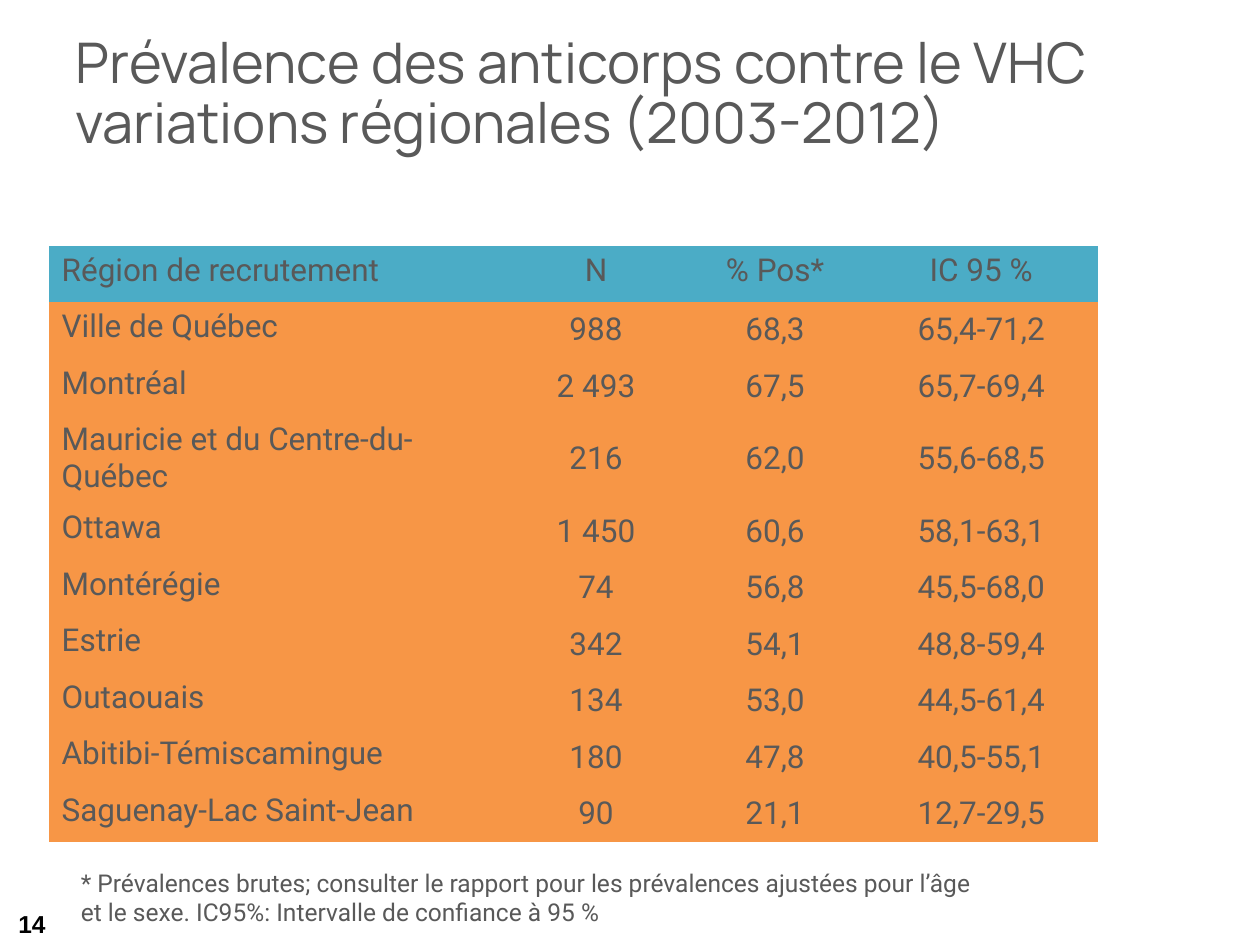
import dataclasses

import pptx
import pptx.dml.color
import pptx.enum.text
import pptx.oxml.ns
import pptx.presentation
import pptx.slide
import pptx.text.text
import pptx.util

Cm = pptx.util.Cm
Align = pptx.enum.text.PP_ALIGN
Anchor = pptx.enum.text.MSO_ANCHOR

GREY = "595959"
HEADER_FILL = "4BACC6"
BODY_FILL = "F79646"
NO_GRID_STYLE = "{2D5ABB26-0587-4C30-8999-92F81FD0307C}"
COLUMN_WIDTHS = (9.22, 3.61, 3.61, 4.7)
ROW_HEIGHT = 1.14
TWO_LINE_ROW_HEIGHT = 1.73


@dataclasses.dataclass(frozen=True)
class Region:
    name: str
    count: str
    positive: str
    interval: str
    height: float = ROW_HEIGHT


HEADER = Region("Région de recrutement", "N", "% Pos*", "IC 95 %")
REGIONS = (
    Region("Ville de Québec", "988", "68,3", "65,4-71,2"),
    Region("Montréal", "2 493", "67,5", "65,7-69,4"),
    Region("Mauricie et du Centre-du-Québec", "216", "62,0", "55,6-68,5", TWO_LINE_ROW_HEIGHT),
    Region("Ottawa", "1 450", "60,6", "58,1-63,1"),
    Region("Montérégie", "74", "56,8", "45,5-68,0"),
    Region("Estrie", "342", "54,1", "48,8-59,4"),
    Region("Outaouais", "134", "53,0", "44,5-61,4"),
    Region("Abitibi-Témiscamingue", "180", "47,8", "40,5-55,1"),
    Region("Saguenay-Lac Saint-Jean", "90", "21,1", "12,7-29,5"),
)


def color(value: str) -> pptx.dml.color.RGBColor:
    return pptx.dml.color.RGBColor.from_string(value)


def write_text(
    frame: pptx.text.text.TextFrame,
    text: str,
    *,
    size: int = 18,
    font: str = "Roboto",
    fill: str = GREY,
    bold: bool = False,
    align: Align = Align.LEFT,
    line_spacing: float = 1.0,
) -> None:
    paragraph = frame.paragraphs[0]
    paragraph.alignment = align
    paragraph.line_spacing = line_spacing
    run = paragraph.add_run()
    run.text = text
    run.font.size = pptx.util.Pt(size)
    run.font.name = font
    run.font.bold = bold
    run.font.color.rgb = color(fill)


def add_text_frame(
    slide: pptx.slide.Slide,
    left: float,
    top: float,
    width: float,
    height: float,
    anchor: Anchor = Anchor.MIDDLE,
) -> pptx.text.text.TextFrame:
    shape = slide.shapes.add_textbox(Cm(left), Cm(top), Cm(width), Cm(height))
    frame = shape.text_frame
    frame.word_wrap = True
    frame.vertical_anchor = anchor
    return frame


def add_region_table(slide: pptx.slide.Slide, left: float, top: float) -> None:
    regions = (HEADER, *REGIONS)
    shape = slide.shapes.add_table(
        len(regions),
        len(COLUMN_WIDTHS),
        Cm(left),
        Cm(top),
        Cm(sum(COLUMN_WIDTHS)),
        Cm(sum(region.height for region in regions)),
    )
    table = shape.table
    table.first_row = False
    table.horz_banding = False
    style = shape._element.find(".//" + pptx.oxml.ns.qn("a:tableStyleId"))
    style.text = NO_GRID_STYLE
    for column, width in zip(table.columns, COLUMN_WIDTHS):
        column.width = Cm(width)
    for row, region in zip(table.rows, regions):
        row.height = Cm(region.height)
        is_header = region is HEADER
        values = (region.name, region.count, region.positive, region.interval)
        for index, (cell, value) in enumerate(zip(row.cells, values)):
            is_name = index == 0
            cell.fill.solid()
            cell.fill.fore_color.rgb = color(HEADER_FILL if is_header else BODY_FILL)
            cell.vertical_anchor = Anchor.TOP if is_header or is_name else Anchor.MIDDLE
            write_text(cell.text_frame, value, align=Align.LEFT if is_name else Align.CENTER)


def main() -> None:
    presentation = pptx.Presentation()
    presentation.slide_width = Cm(25.4)
    presentation.slide_height = Cm(19.05)
    slide = presentation.slides.add_slide(presentation.slide_layouts[6])

    title = add_text_frame(slide, 1.27, 0.33, 22.86, 3.18)
    write_text(
        title,
        "Prévalence des anticorps contre le VHC variations régionales (2003-2012)",
        size=32,
        font="Manrope",
        line_spacing=0.9,
    )

    number = add_text_frame(slide, -0.05, 18.11, 1.22, 1.02)
    write_text(number, "14", size=14, font="Arial", fill="000000", bold=True, align=Align.RIGHT)

    add_region_table(slide, 0.99, 4.95)

    footnote = add_text_frame(slide, 0.89, 17.25, 19.15, 1.63, Anchor.TOP)
    footnote.margin_left = Cm(0.74)
    footnote.margin_top = Cm(0.25)
    write_text(
        footnote,
        "* Prévalences brutes; consulter le rapport pour les prévalences ajustées pour l’âge "
        "et le sexe. IC95%: Intervalle de confiance à 95 %",
        size=14,
    )

    presentation.save("out.pptx")


if __name__ == "__main__":
    main()
